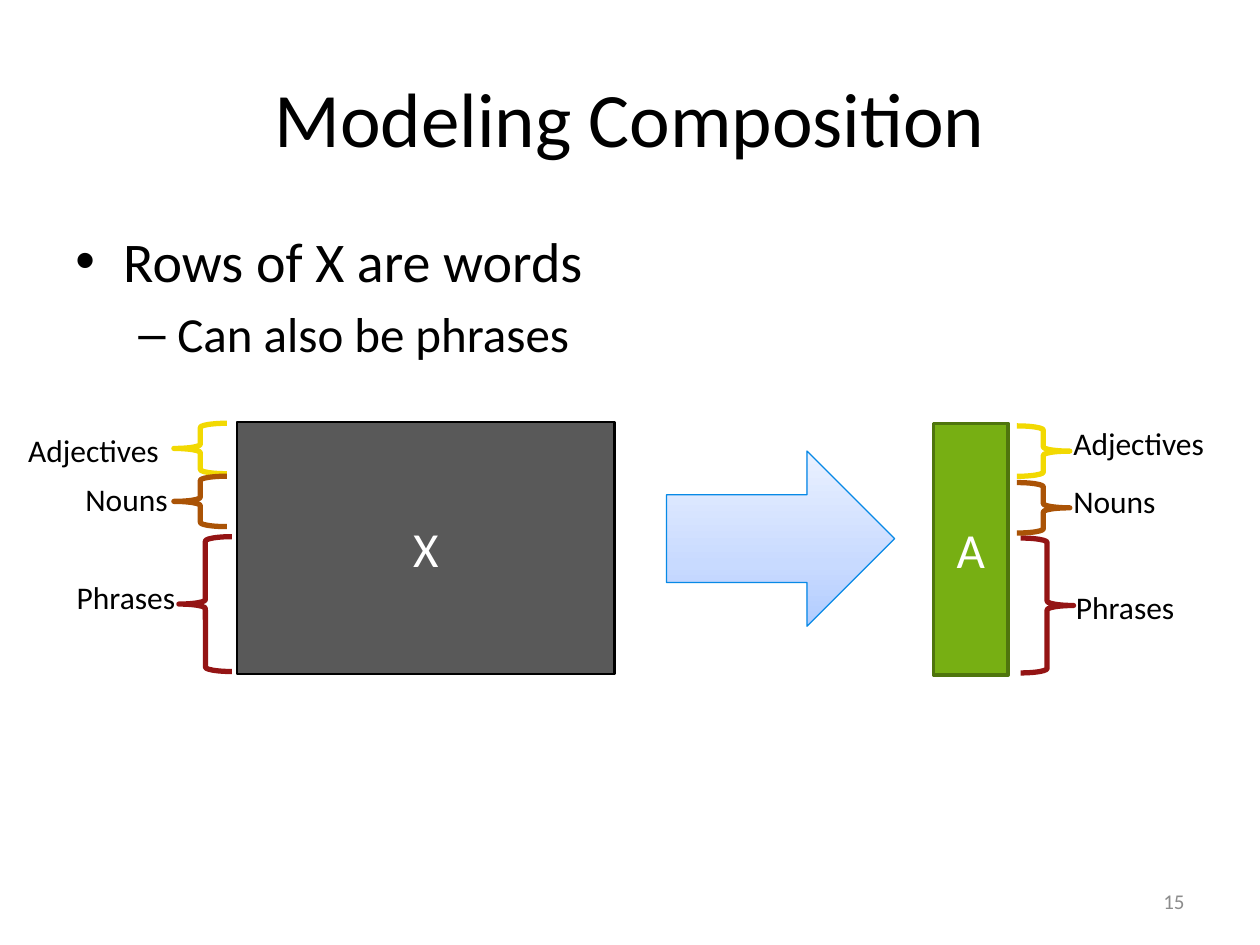
from dataclasses import dataclass

from lxml.etree import SubElement
from pptx import Presentation
from pptx.dml.color import RGBColor
from pptx.enum.shapes import MSO_SHAPE
from pptx.enum.text import MSO_ANCHOR, MSO_AUTO_SIZE, PP_ALIGN
from pptx.oxml.ns import qn
from pptx.util import Inches, Pt


@dataclass(frozen=True)
class Theme:
    font: str = "Calibri"
    text: str = "000000"
    inverse: str = "FFFFFF"
    muted: str = "8C8C8C"
    matrix_x: str = "595959"
    matrix_a: str = "77AF13"
    matrix_a_line: str = "4F750D"
    adjectives: str = "F2D902"
    nouns: str = "AA5306"
    phrases: str = "941414"
    arrow_line: str = "0789E6"
    arrow_stops: tuple = ((0, "B1CCFF"), (35, "C8DAFF"), (100, "EAF1FF"))
    title_size: int = 44
    body_size: int = 32
    sub_size: int = 28
    label_size: int = 18
    number_size: int = 12


THEME = Theme()
BRACE_WIDTH = 0.42


def inches(*lengths):
    return [Inches(length) for length in lengths]


def format_paragraph(para, size, color=THEME.text, align=PP_ALIGN.LEFT):
    para.alignment = align
    for span in para.runs:
        span.font.name = THEME.font
        span.font.size = Pt(size)
        span.font.color.rgb = RGBColor.from_string(color)


def set_title(slide, text):
    title = slide.shapes.title
    title.left, title.top, title.width, title.height = inches(0.5, 0.3, 9, 1.25)
    title.text_frame.text = text
    title.text_frame.vertical_anchor = MSO_ANCHOR.MIDDLE
    format_paragraph(title.text_frame.paragraphs[0], THEME.title_size,
                     align=PP_ALIGN.CENTER)


def set_bullet(para, character, indent, hanging, level):
    """Give a paragraph a bullet and 20% space before it."""
    para.level = level
    properties = para._p.get_or_add_pPr()
    properties.set("marL", str(Inches(indent)))
    properties.set("indent", str(-Inches(hanging)))
    spacing = SubElement(properties, qn("a:spcBef"))
    SubElement(spacing, qn("a:spcPct")).set("val", "20000")
    SubElement(properties, qn("a:buFont")).set("typeface", "Arial")
    SubElement(properties, qn("a:buChar")).set("char", character)


def add_bullets(slide, position, items):
    box = slide.shapes.add_textbox(*inches(*position))
    frame = box.text_frame
    frame.word_wrap = True
    frame.text = "\n".join(item[0] for item in items)
    for level, (para, item) in enumerate(zip(frame.paragraphs, items)):
        _, size, character, indent, hanging = item
        format_paragraph(para, size)
        set_bullet(para, character, indent, hanging, level)


def add_text(slide, position, text, size, color=THEME.text,
             align=PP_ALIGN.LEFT, anchor=MSO_ANCHOR.TOP):
    box = slide.shapes.add_textbox(*inches(*position))
    frame = box.text_frame
    frame.text = text
    frame.word_wrap = False
    frame.vertical_anchor = anchor
    format_paragraph(frame.paragraphs[0], size, color, align)
    return box


def add_outlined(slide, kind, position, line, width):
    shape = slide.shapes.add_shape(kind, *inches(*position))
    shape.shadow.inherit = False
    shape.line.color.rgb = RGBColor.from_string(line)
    shape.line.width = Pt(width)
    return shape


def add_matrix(slide, position, name, fill, line, width):
    matrix = add_outlined(slide, MSO_SHAPE.RECTANGLE, position, line, width)
    matrix.fill.solid()
    matrix.fill.fore_color.rgb = RGBColor.from_string(fill)
    matrix.text_frame.text = name
    matrix.text_frame.vertical_anchor = MSO_ANCHOR.MIDDLE
    format_paragraph(matrix.text_frame.paragraphs[0], THEME.sub_size,
                     THEME.inverse, PP_ALIGN.CENTER)


def add_brace(slide, left, top, height, color, rotation):
    brace = add_outlined(slide, MSO_SHAPE.LEFT_BRACE,
                         (left, top, BRACE_WIDTH, height), color, 3)
    brace.fill.background()
    brace.rotation = rotation


def add_row_group(slide, text, color, brace, label, rotation, align):
    """Add a brace (left, top, height) and its label (left, top, width)."""
    add_brace(slide, *brace, color, rotation)
    box = add_text(slide, (*label, 0.4), text, THEME.label_size, align=align)
    box.text_frame.auto_size = MSO_AUTO_SIZE.SHAPE_TO_FIT_TEXT


def add_gradient_arrow(slide, position):
    arrow = add_outlined(slide, MSO_SHAPE.RIGHT_ARROW, position,
                         THEME.arrow_line, 0.75)
    arrow.fill.gradient()
    arrow.fill.gradient_angle = 90
    stops = arrow._element.spPr.find(qn("a:gradFill")).find(qn("a:gsLst"))
    for stop in list(stops):
        stops.remove(stop)
    for percent, color in THEME.arrow_stops:
        stop = SubElement(stops, qn("a:gs"), pos=str(percent * 1000))
        SubElement(stop, qn("a:srgbClr"), val=color)


def main():
    deck = Presentation()
    deck.slide_width, deck.slide_height = inches(10, 7.5)
    slide = deck.slides.add_slide(deck.slide_layouts[5])

    set_title(slide, "Modeling Composition")
    add_bullets(slide, (0.5, 1.75, 9, 4.95), [
        ("Rows of X are words", THEME.body_size, "•", 0.38, 0.38),
        ("Can also be phrases", THEME.sub_size, "–", 0.81, 0.31),
    ])
    add_matrix(slide, (1.88, 3.35, 3, 2), "X",
               THEME.matrix_x, THEME.text, 1.5)
    add_matrix(slide, (7.41, 3.36, 0.59, 2), "A",
               THEME.matrix_a, THEME.matrix_a_line, 2)

    row_groups = [
        ("Phrases", THEME.phrases,
         (1.42, 4.26, 1.07), (0.33, 4.54, 1.16),
         (8.1, 4.27, 1.07), (8.44, 4.62, 1.16)),
        ("Adjectives", THEME.adjectives,
         (1.38, 3.36, 0.4), (-0.04, 3.37, 1.4),
         (8.07, 3.38, 0.4), (8.42, 3.32, 1.25)),
        ("Nouns", THEME.nouns,
         (1.38, 3.78, 0.4), (0.46, 3.76, 0.97),
         (8.07, 3.83, 0.4), (8.42, 3.78, 0.86)),
    ]
    for text, color, x_brace, x_label, a_brace, a_label in row_groups:
        add_row_group(slide, text, color, x_brace, x_label, 0, PP_ALIGN.RIGHT)
        add_row_group(slide, text, color, a_brace, a_label, 180, PP_ALIGN.LEFT)

    add_gradient_arrow(slide, (5.29, 3.58, 1.81, 1.39))
    add_text(slide, (7.17, 6.95, 2.33, 0.4), "15", THEME.number_size,
             THEME.muted, PP_ALIGN.RIGHT, MSO_ANCHOR.MIDDLE)
    deck.save("out.pptx")


if __name__ == "__main__":
    main()
